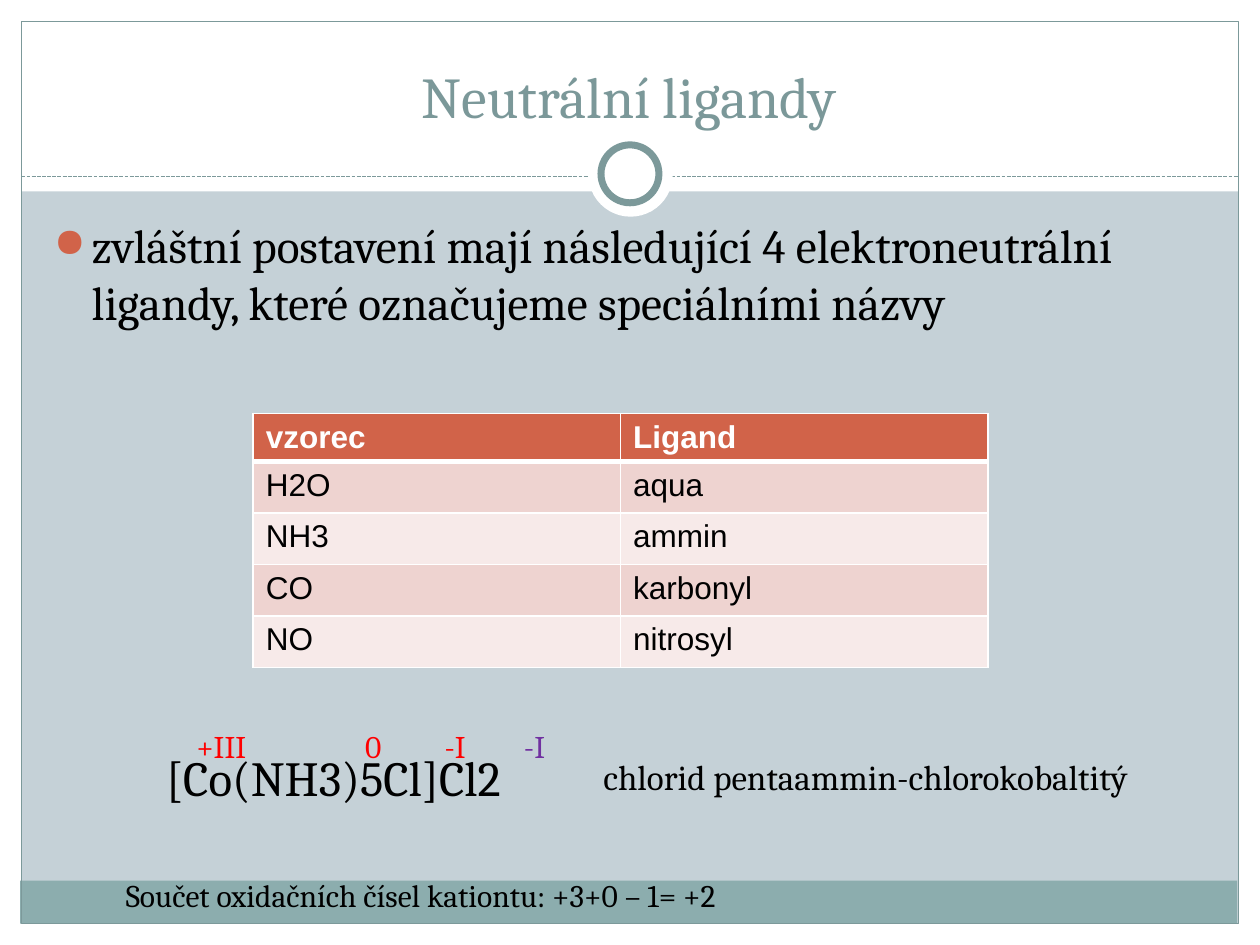
from dataclasses import dataclass

from lxml.etree import SubElement
from pptx import Presentation
from pptx.dml.color import RGBColor
from pptx.enum.dml import MSO_LINE
from pptx.enum.shapes import MSO_CONNECTOR, MSO_SHAPE
from pptx.enum.text import MSO_ANCHOR, MSO_AUTO_SIZE, PP_ALIGN
from pptx.oxml.ns import qn
from pptx.util import Inches, Pt


@dataclass(frozen=True)
class Theme:
    background: str = "C5D1D7"
    white: str = "FFFFFF"
    black: str = "000000"
    footer: str = "8CADAE"
    frame: str = "7C999A"
    title: str = "7B9899"
    accent: str = "D16349"
    row_dark: str = "EED3D0"
    row_light: str = "F7EAE9"
    inner_charge: str = "FF0000"
    outer_charge: str = "7030A0"
    serif: str = "Cambria"
    sans: str = "Arial"
    title_size: int = 33
    body_size: int = 27
    formula_size: int = 28
    name_size: int = 20
    small_size: int = 18


THEME = Theme()


def rgb(value):
    return RGBColor.from_string(value)


def add_panel(slide, box, fill=None, line=None, width=0.75, kind=MSO_SHAPE.RECTANGLE):
    panel = slide.shapes.add_shape(kind, *map(Inches, box))
    panel.shadow.inherit = False
    if fill:
        panel.fill.solid()
        panel.fill.fore_color.rgb = rgb(fill)
    else:
        panel.fill.background()
    if line:
        panel.line.color.rgb = rgb(line)
        panel.line.width = Pt(width)
    else:
        panel.line.fill.background()


def add_divider(slide, y, left, right):
    divider = slide.shapes.add_connector(
        MSO_CONNECTOR.STRAIGHT, Inches(left), Inches(y), Inches(right), Inches(y))
    divider.line.color.rgb = rgb(THEME.frame)
    divider.line.width = Pt(0.75)
    divider.line.dash_style = MSO_LINE.SQUARE_DOT
    SubElement(divider._element.spPr, qn("a:effectLst"))


def add_run(paragraph, text, size, color, font=THEME.serif, bold=False):
    run = paragraph.add_run()
    run.text = text
    run.font.size = Pt(size)
    run.font.name = font
    run.font.bold = bold
    run.font.color.rgb = rgb(color)


def add_text(slide, box, text, size, color=THEME.black, wrap=False, grow=True):
    frame = slide.shapes.add_textbox(*map(Inches, box)).text_frame
    frame.word_wrap = wrap
    frame.auto_size = MSO_AUTO_SIZE.SHAPE_TO_FIT_TEXT if grow else MSO_AUTO_SIZE.NONE
    add_run(frame.paragraphs[0], text, size, color)
    return frame


def add_title(slide, text):
    frame = add_text(slide, (0.33, 0.25, 9.33, 0.83), text, THEME.title_size,
                     THEME.title, wrap=True, grow=False)
    frame.vertical_anchor = MSO_ANCHOR.BOTTOM
    frame.paragraphs[0].alignment = PP_ALIGN.CENTER


def add_bullet(slide, text):
    frame = add_text(slide, (0.33, 1.67, 9.3, 5), text, THEME.body_size,
                     wrap=True, grow=False)
    paragraph = frame.paragraphs[0]
    paragraph.space_before = Pt(THEME.body_size * 0.2)
    props = paragraph._p.get_or_add_pPr()
    props.set("marL", str(Inches(0.3)))
    props.set("indent", str(-Inches(0.3)))
    SubElement(SubElement(props, qn("a:buClr")), qn("a:srgbClr"), val=THEME.accent)
    SubElement(props, qn("a:buSzPct"), val="85000")
    SubElement(props, qn("a:buChar"), char="●")


def add_cell_borders(cell, widths):
    props = cell._tc.get_or_add_tcPr()
    for side, width in zip("LRTB", widths):
        border = SubElement(props, qn(f"a:ln{side}"), w=str(Pt(width)))
        fill = SubElement(border, qn("a:solidFill"))
        SubElement(fill, qn("a:srgbClr"), val=THEME.white)


def add_ligand_table(slide, rows):
    table = slide.shapes.add_table(
        len(rows), len(rows[0]), Inches(2.01), Inches(3.28), Inches(5.83), Inches(2.02)).table
    for row_index, values in enumerate(rows):
        header = row_index == 0
        table.rows[row_index].height = Inches(0.38 if header else 0.41)
        band = THEME.row_dark if row_index % 2 else THEME.row_light
        for column, text in enumerate(values):
            cell = table.cell(row_index, column)
            add_cell_borders(cell, (1, 1, 3 if row_index == 1 else 1, 3 if header else 1))
            cell.fill.solid()
            cell.fill.fore_color.rgb = rgb(THEME.accent if header else band)
            add_run(cell.text_frame.paragraphs[0], text, THEME.small_size,
                    THEME.white if header else THEME.black, THEME.sans, header)


def add_backdrop(slide):
    slide.background.fill.solid()
    slide.background.fill.fore_color.rgb = rgb(THEME.background)
    for margin in ((0, 7.33, 10, 0.17), (0, 0, 10, 1.52),
                   (0, 0, 0.17, 7.5), (9.83, 0, 0.17, 7.5)):
        add_panel(slide, margin, THEME.white)
    add_panel(slide, (0.16, 6.99, 9.66, 0.34), THEME.footer)
    add_panel(slide, (0.17, 0.17, 9.66, 7.16), line=THEME.frame)
    add_divider(slide, 1.4, 0.17, 9.83)
    add_panel(slide, (4.67, 1.05, 0.67, 0.67), THEME.white, kind=MSO_SHAPE.OVAL)
    add_panel(slide, (4.77, 1.15, 0.46, 0.46), THEME.white, THEME.frame, 4, MSO_SHAPE.OVAL)


def add_formula(slide):
    add_text(slide, (1.22, 5.88, 3.31, 0.57), "[Co(NH3)5Cl]Cl2", THEME.formula_size, wrap=True)
    for left, width, charge, color in (
            (1.46, 0.66, "+III", THEME.inner_charge),
            (2.8, 0.36, "0", THEME.inner_charge),
            (3.43, 0.39, "-I", THEME.inner_charge),
            (4.06, 0.39, "-I", THEME.outer_charge)):
        add_text(slide, (left, 5.72, width, 0.4), charge, THEME.small_size, color)


def main():
    deck = Presentation()
    deck.slide_width, deck.slide_height = Inches(10), Inches(7.5)
    slide = deck.slides.add_slide(deck.slide_layouts[6])
    add_backdrop(slide)
    add_title(slide, "Neutrální ligandy")
    add_bullet(slide, "zvláštní postavení mají následující 4 elektroneutrální ligandy, "
                      "které označujeme speciálními názvy")
    add_ligand_table(slide, (("vzorec", "Ligand"), ("H2O", "aqua"), ("NH3", "ammin"),
                             ("CO", "karbonyl"), ("NO", "nitrosyl")))
    add_formula(slide)
    add_text(slide, (0.9, 6.9, 5.46, 0.4),
             "Součet oxidačních čísel kationtu: +3+0 – 1= +2", THEME.small_size)
    add_text(slide, (4.69, 5.95, 4.73, 0.44),
             "chlorid pentaammin-chlorokobaltitý", THEME.name_size)
    deck.save("out.pptx")


if __name__ == "__main__":
    main()
